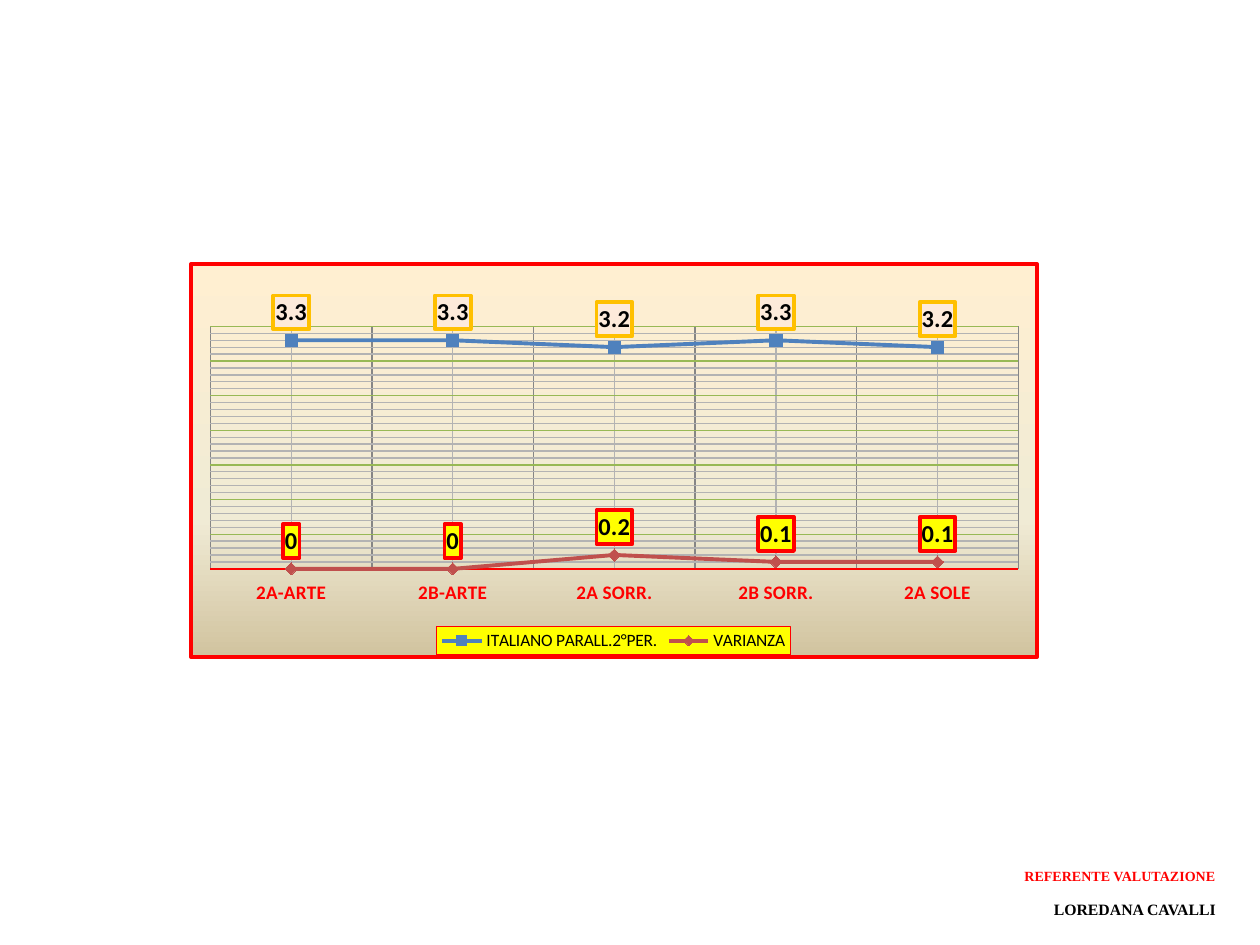
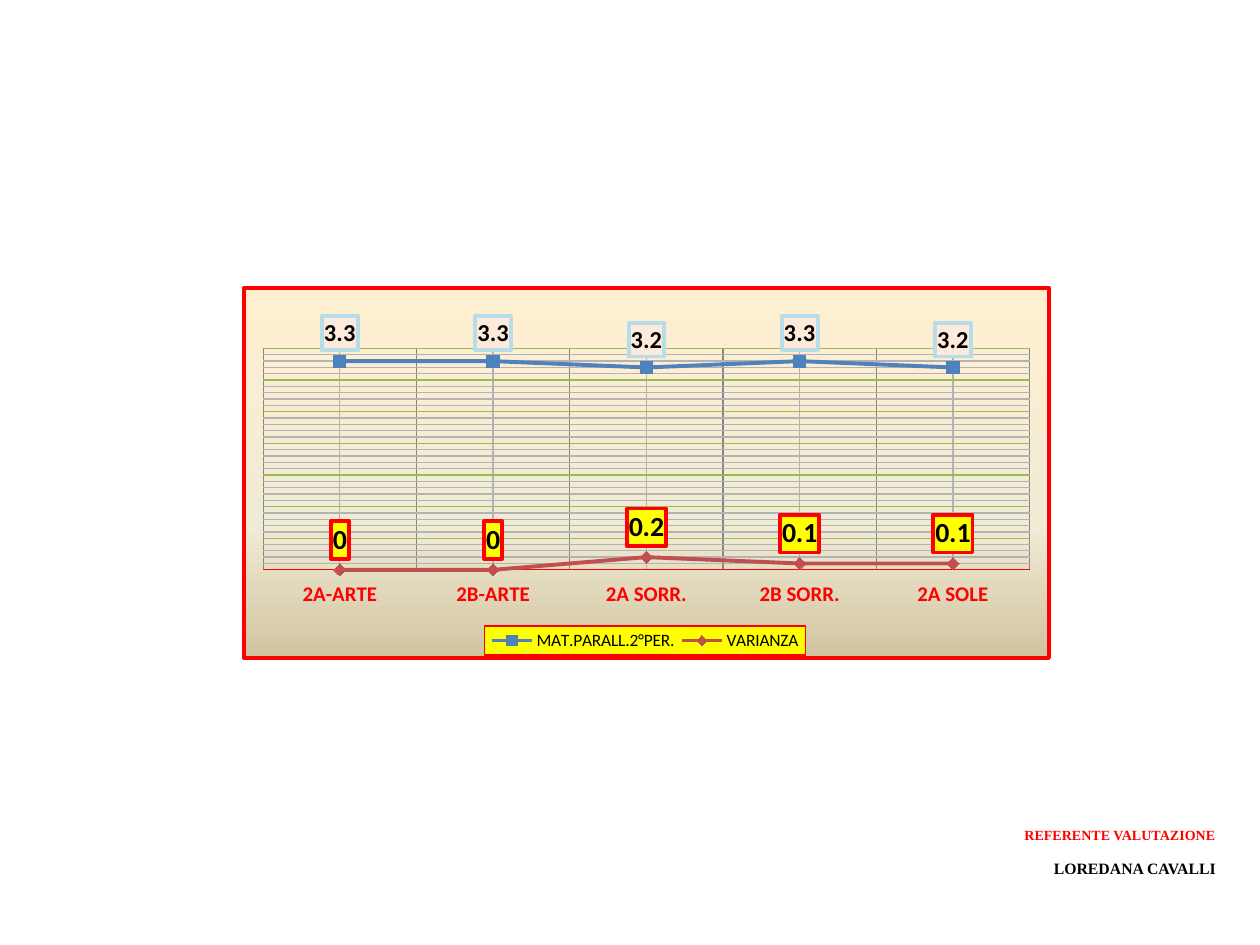
from lxml import etree
from pptx import Presentation
from pptx.chart.data import CategoryChartData
from pptx.dml.color import RGBColor
from pptx.enum.chart import (XL_CHART_TYPE, XL_LABEL_POSITION,
                             XL_LEGEND_POSITION, XL_MARKER_STYLE,
                             XL_TICK_LABEL_POSITION, XL_TICK_MARK)
from pptx.enum.text import MSO_AUTO_SIZE, PP_ALIGN
from pptx.oxml import parse_xml
from pptx.oxml.ns import qn
from pptx.util import Pt

LINE = XL_CHART_TYPE.LINE_MARKERS
ABOVE = XL_LABEL_POSITION.ABOVE
BOTTOM = XL_LEGEND_POSITION.BOTTOM
LOW = XL_TICK_LABEL_POSITION.LOW
NONE = XL_TICK_MARK.NONE
MARKS = [XL_MARKER_STYLE.SQUARE, XL_MARKER_STYLE.DIAMOND]
GROW = MSO_AUTO_SIZE.SHAPE_TO_FIT_TEXT
RIGHT = PP_ALIGN.RIGHT
PX = 914400 / 126

HUE = {
    "red": "FF0000", "black": "000000", "yellow": "FFFF00",
    "blue": "4F81BD", "brick": "C0504D", "green": "98B955",
    "gray": "868686", "pale": "B3B3B3", "peach": "FDEADA",
    "gold": "FFC000", "sky": "B7DEE8",
    "cream": "FFEFD1", "sand": "F0EBD5", "tan": "D1C39F",
}
RGB = {name: RGBColor.from_string(code) for name, code in HUE.items()}
SOLID = '<a:solidFill><a:srgbClr val="{}"/></a:solidFill>'
STOPS = "".join(
    f'<a:gs pos="{at * 1000}"><a:srgbClr val="{HUE[name]}"/></a:gs>'
    for at, name in [(0, "cream"), (65, "sand"), (100, "tan")])
FADE = f'<a:gradFill><a:gsLst>{STOPS}</a:gsLst><a:lin ang="5400000" scaled="0"/></a:gradFill>'
SPACE = ('xmlns:c="http://schemas.openxmlformats.org/drawingml/2006/chart" '
         'xmlns:a="http://schemas.openxmlformats.org/drawingml/2006/main"')


def frame(fill, edge, width):
    line = SOLID.format(HUE[edge])
    return parse_xml(f'<c:spPr {SPACE}>{fill}<a:ln w="{Pt(width)}">{line}</a:ln></c:spPr>')


def text(para, words, size, color, font="Times New Roman"):
    para.alignment = RIGHT
    para.line_spacing = 1.07
    para.space_after = Pt(8)
    run = para.add_run()
    run.text = words
    run.font.name = font
    run.font.size = Pt(size)
    run.font.bold = True
    run.font.color.rgb = RGB[color]


CLASSES = ["2A-ARTE", "2B-ARTE", "2A SORR.", "2B SORR.", "2A SOLE"]
MEANS = [3.3, 3.3, 3.2, 3.3, 3.2]
SPREAD = [0, 0, 0.2, 0.1, 0.1]
PAGES = [
    dict(name="ITALIANO PARALL.2°PER.", box=(189, 262, 850, 397),
         plot=(0.023, 0.159, 0.955, 0.617), key=(0.29, 0.922, 0.419, 0.073),
         edge="gold", sizes=(14, 14), axis=11, foot=860),
    dict(name="MAT.PARALL.2°PER.", box=(242, 286, 809, 374),
         plot=(0.024, 0.164, 0.952, 0.598), key=(0.299, 0.914, 0.399, 0.078),
         edge="sky", sizes=(14, 16), axis=12, foot=819),
]

deck = Presentation()
deck.slide_width = round(1260 * PX)
deck.slide_height = round(945 * PX)

for page in PAGES:
    slide = deck.slides.add_slide(deck.slide_layouts[6])
    data = CategoryChartData()
    data.categories = CLASSES
    data.add_series(page["name"], MEANS)
    data.add_series("VARIANZA", SPREAD)
    box = [round(v * PX) for v in page["box"]]
    chart = slide.shapes.add_chart(LINE, *box, data).chart
    chart.has_title = False
    chart.font.name = "Calibri"
    chart.font.size = Pt(10)
    chart.font.color.rgb = RGB["black"]

    chart.has_legend = True
    chart.legend.position = BOTTOM
    chart.legend.include_in_layout = False
    chart.legend.font.size = Pt(10)

    cats = chart.category_axis
    cats.major_tick_mark = NONE
    cats.minor_tick_mark = NONE
    cats.tick_label_position = LOW
    cats.tick_labels.font.size = Pt(page["axis"])
    cats.tick_labels.font.bold = True
    cats.tick_labels.font.color.rgb = RGB["red"]
    cats.format.line.color.rgb = RGB["red"]
    cats.format.line.width = Pt(0.75)

    vals = chart.value_axis
    vals.visible = False
    vals.minimum_scale = 0
    vals.maximum_scale = 3.5
    vals.major_unit = 0.5
    vals.minor_unit = 0.1

    root = chart.element
    for axis, hue in [(cats, "gray"), (vals, "green")]:
        axis.has_major_gridlines = True
        axis.has_minor_gridlines = True
        axis.major_gridlines.format.line.color.rgb = RGB[hue]
        axis.major_gridlines.format.line.width = Pt(0.75)
    for grid in root.iter(qn("c:minorGridlines")):
        grid.append(frame("", "pale", 0.75))

    looks = zip(chart.plots[0].series, ["blue", "brick"], MARKS, page["sizes"],
                ["peach", "yellow"], [page["edge"], "red"])
    for series, hue, mark, size, fill, edge in looks:
        series.smooth = False
        series.format.line.color.rgb = RGB[hue]
        series.format.line.width = Pt(2.25)
        series.marker.style = mark
        series.marker.size = 7
        series.marker.format.fill.solid()
        series.marker.format.fill.fore_color.rgb = RGB[hue]
        series.marker.format.line.color.rgb = RGB[hue]
        tags = series.data_labels
        tags.show_value = True
        tags.position = ABOVE
        tags.font.size = Pt(size)
        tags.font.bold = True
    bodies = root.findall(".//" + qn("c:dLbls") + "/" + qn("c:txPr"))
    for body, fill, edge in zip(bodies, ["peach", "yellow"], [page["edge"], "red"]):
        body.addprevious(frame(SOLID.format(HUE[fill]), edge, 2.25))

    root.find(qn("c:chart")).addnext(frame(FADE, "red", 2.25))
    area = root.find(".//" + qn("c:plotArea"))
    legend = root.find(".//" + qn("c:legend"))
    legend.find(qn("c:overlay")).addnext(frame(SOLID.format(HUE["yellow"]), "red", 0.75))
    for part, spot, place in [(area, 0, page["plot"]), (legend, 1, page["key"])]:
        for old in part.findall(qn("c:layout")):
            part.remove(old)
        layout = etree.Element(qn("c:layout"))
        manual = etree.SubElement(layout, qn("c:manualLayout"))
        rules = [("xMode", "edge"), ("yMode", "edge"), *zip("xywh", place)]
        if part is area:
            rules.insert(0, ("layoutTarget", "inner"))
        for tag, val in rules:
            etree.SubElement(manual, qn("c:" + tag)).set("val", str(val))
        part.insert(spot, layout)

    foot = [round(v * PX) for v in (598, page["foot"], 630, 66)]
    note = slide.shapes.add_textbox(*foot).text_frame
    note.word_wrap = True
    note.auto_size = GROW
    text(note.paragraphs[0], "REFERENTE VALUTAZIONE", 8, "red")
    text(note.add_paragraph(), "LOREDANA CAVALLI", 9, "black")

deck.save("out.pptx")
